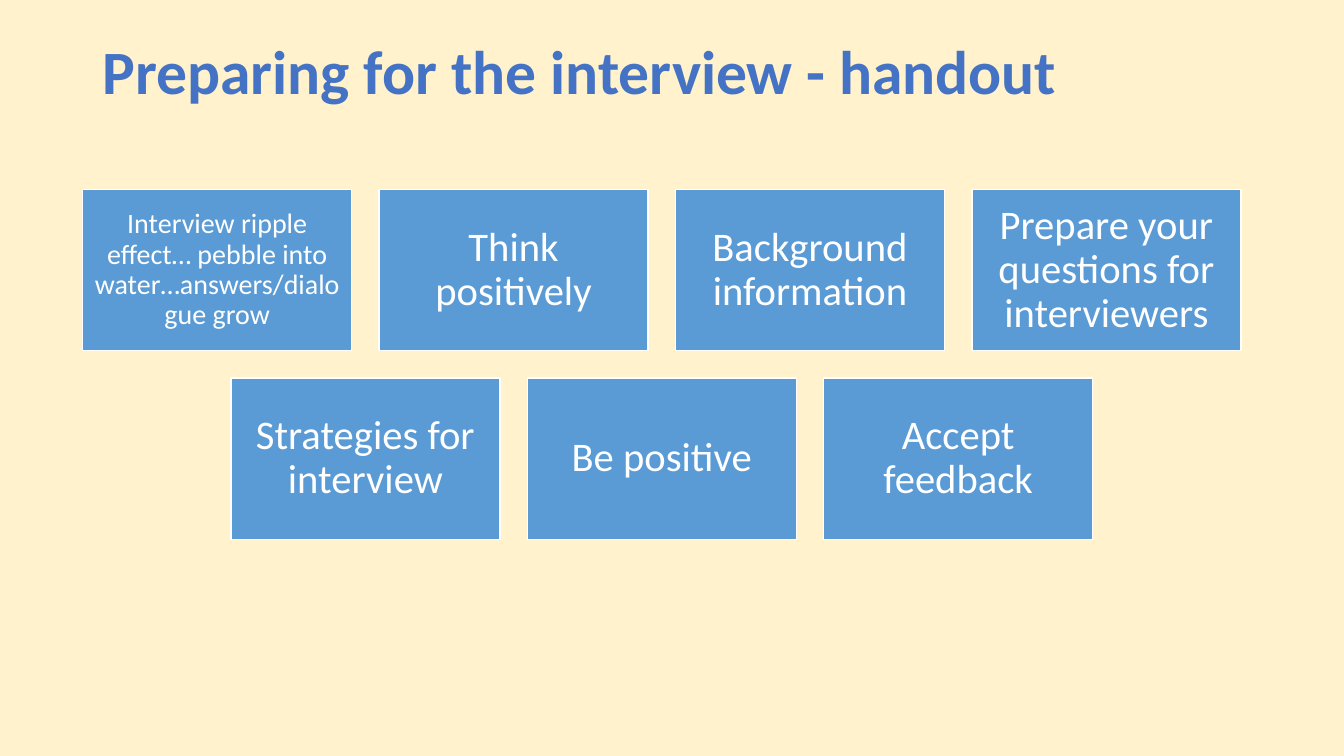
from pptx import Presentation, util as u
from pptx.dml.color import RGBColor
from pptx.enum import shapes, text

TILE_WIDTH, TILE_HEIGHT = 6.78, 4.06
COLUMN_STEP, ROW_STEP = 7.47, 4.75
GRID_CENTER, GRID_TOP = 16.68, 4.78
TOPIC_ROWS = [
    ["Interview ripple effect… pebble into water…answers/dialogue grow",
     "Think positively", "Background information",
     "Prepare your questions for interviewers"],
    ["Strategies for interview", "Be positive", "Accept feedback"],
]


def color(value):
    return RGBColor.from_string(value)


class HandoutSlide:
    font = "Calibri"
    background = "FFF2CC"
    title_color = "4472C4"
    tile_color = "5B9BD5"
    white = "FFFFFF"

    def __init__(self, presentation):
        self.slide = presentation.slides.add_slide(presentation.slide_layouts[6])
        fill = self.slide.background.fill
        fill.solid()
        fill.fore_color.rgb = color(self.background)

    def add_wording(self, shape, wording, size, font_color, align, margins, bold=False):
        frame = shape.text_frame
        frame.word_wrap = True
        frame.vertical_anchor = text.MSO_ANCHOR.MIDDLE
        frame.margin_left = frame.margin_right = u.Cm(margins[0])
        frame.margin_top = frame.margin_bottom = u.Cm(margins[1])
        paragraph = frame.paragraphs[0]
        paragraph.alignment = align
        paragraph.line_spacing = 0.9
        run = paragraph.add_run()
        run.text = wording
        run.font.name = self.font
        run.font.size = u.Pt(size)
        run.font.bold = bold
        run.font.color.rgb = color(font_color)

    def title(self, wording, left, top, width, height):
        box = self.slide.shapes.add_textbox(
            u.Cm(left), u.Cm(top), u.Cm(width), u.Cm(height))
        self.add_wording(box, wording, 44, self.title_color,
                         text.PP_ALIGN.LEFT, (0.25, 0.13), bold=True)

    def tile(self, wording, left, top, size, margin):
        shape = self.slide.shapes.add_shape(
            shapes.MSO_SHAPE.RECTANGLE, u.Cm(left), u.Cm(top),
            u.Cm(TILE_WIDTH), u.Cm(TILE_HEIGHT))
        shape.shadow.inherit = False
        shape.fill.solid()
        shape.fill.fore_color.rgb = color(self.tile_color)
        shape.line.color.rgb = color(self.white)
        shape.line.width = u.Pt(1)
        self.add_wording(shape, wording, size, self.white,
                         text.PP_ALIGN.CENTER, (margin, margin))


def main():
    presentation = Presentation()
    presentation.slide_width = u.Cm(33.87)
    presentation.slide_height = u.Cm(19.05)
    handout = HandoutSlide(presentation)

    # Heading
    handout.title("Preparing for the interview - handout", 2.33, 0.3, 29.21, 3.18)

    # Topic tiles, each row centred on the same axis
    for row, topics in enumerate(TOPIC_ROWS):
        row_width = (len(topics) - 1) * COLUMN_STEP + TILE_WIDTH
        row_left = GRID_CENTER - row_width / 2
        for column, topic in enumerate(topics):
            # A long topic gets smaller type and tighter margins
            size, margin = (20, 0.2) if len(topic) > 40 else (29, 0.3)
            handout.tile(topic, row_left + column * COLUMN_STEP,
                         GRID_TOP + row * ROW_STEP, size, margin)

    presentation.save("out.pptx")


if __name__ == "__main__":
    main()
